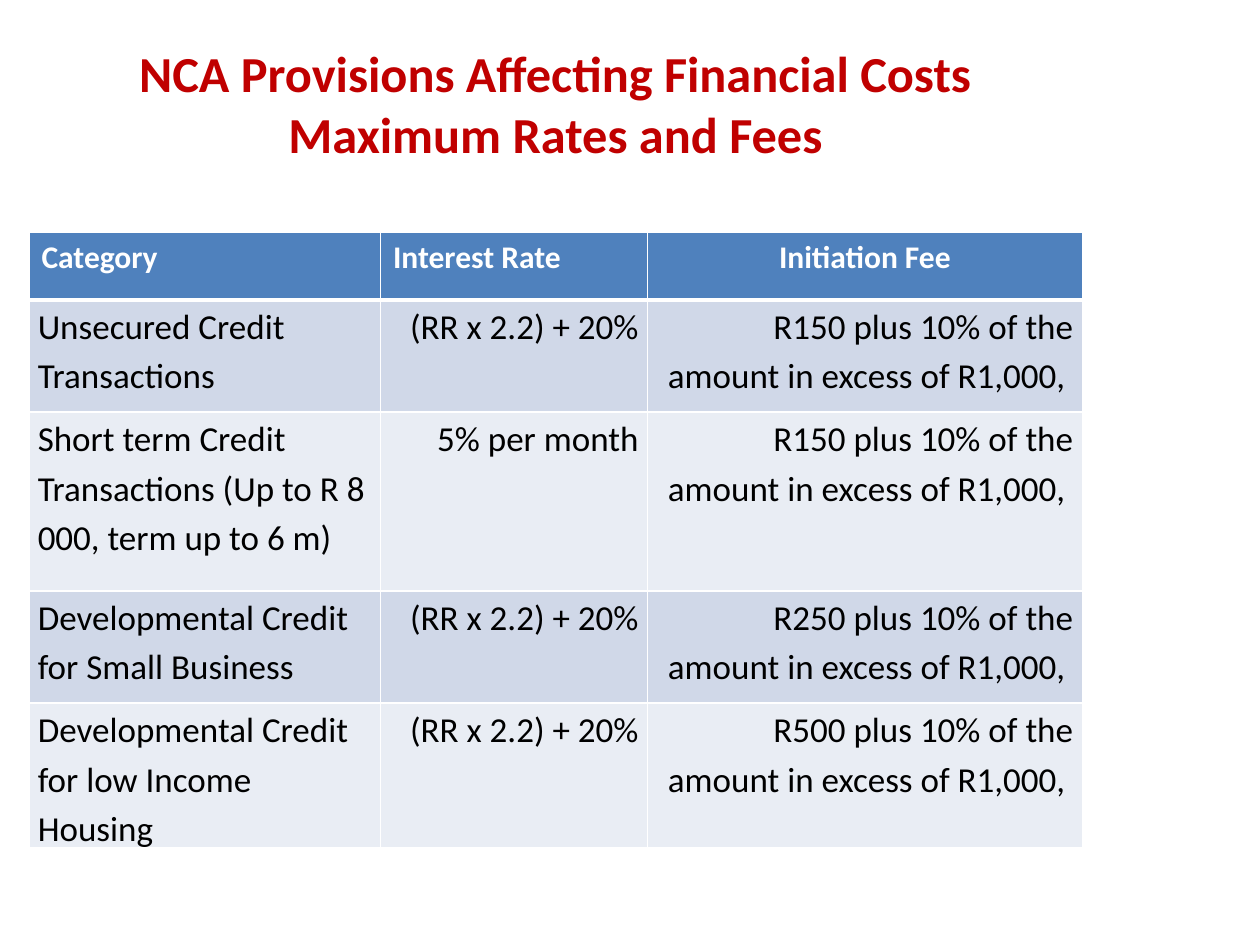
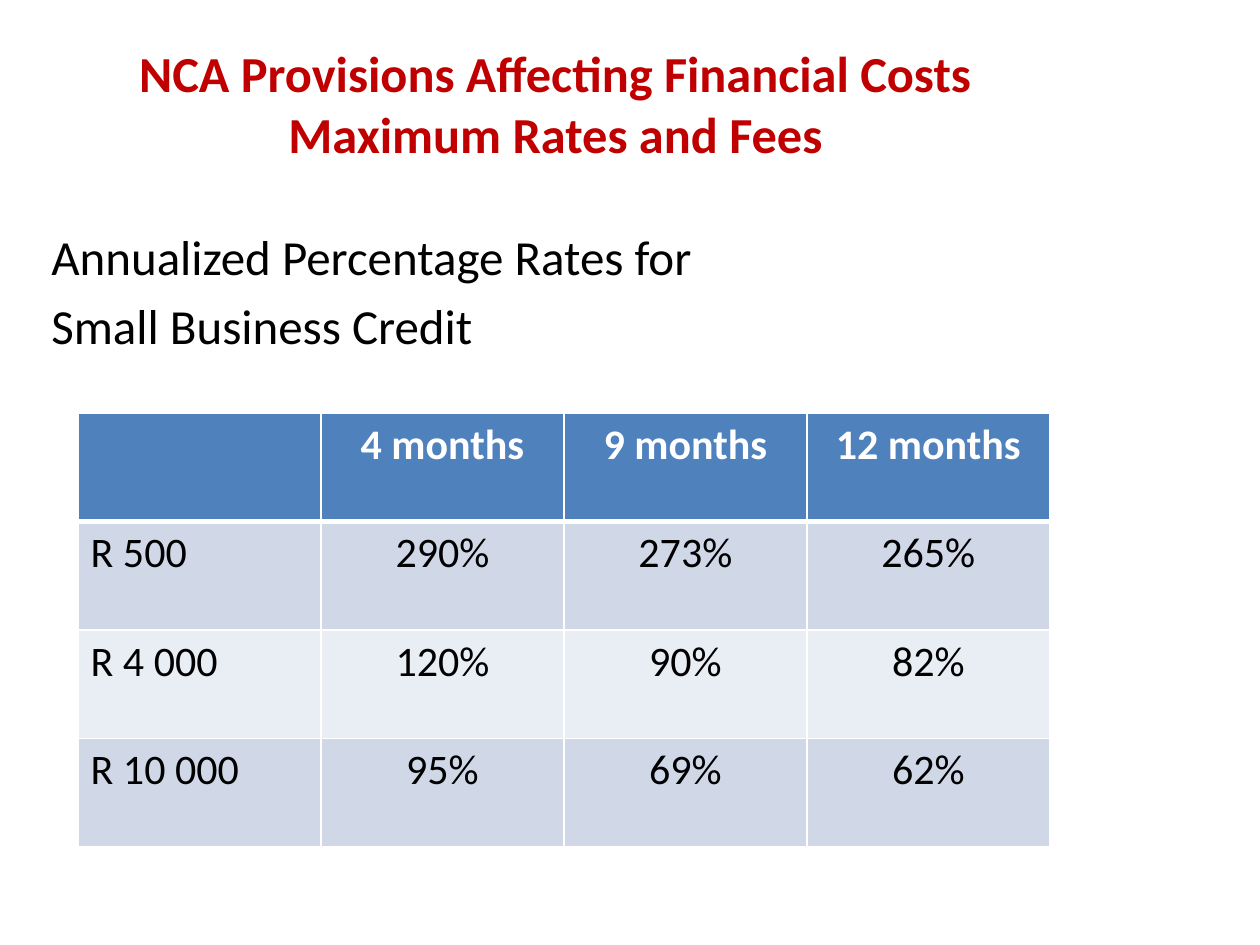
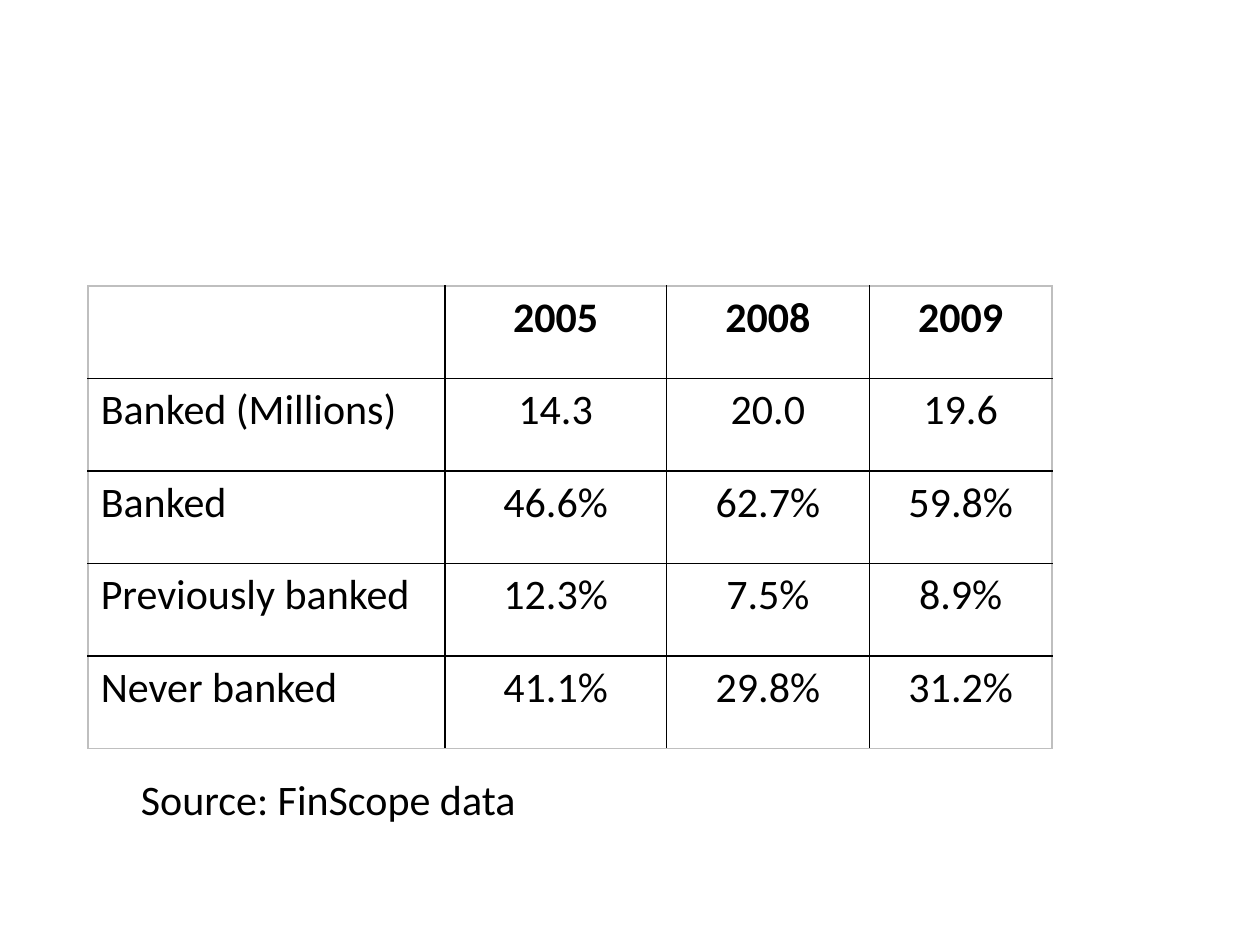
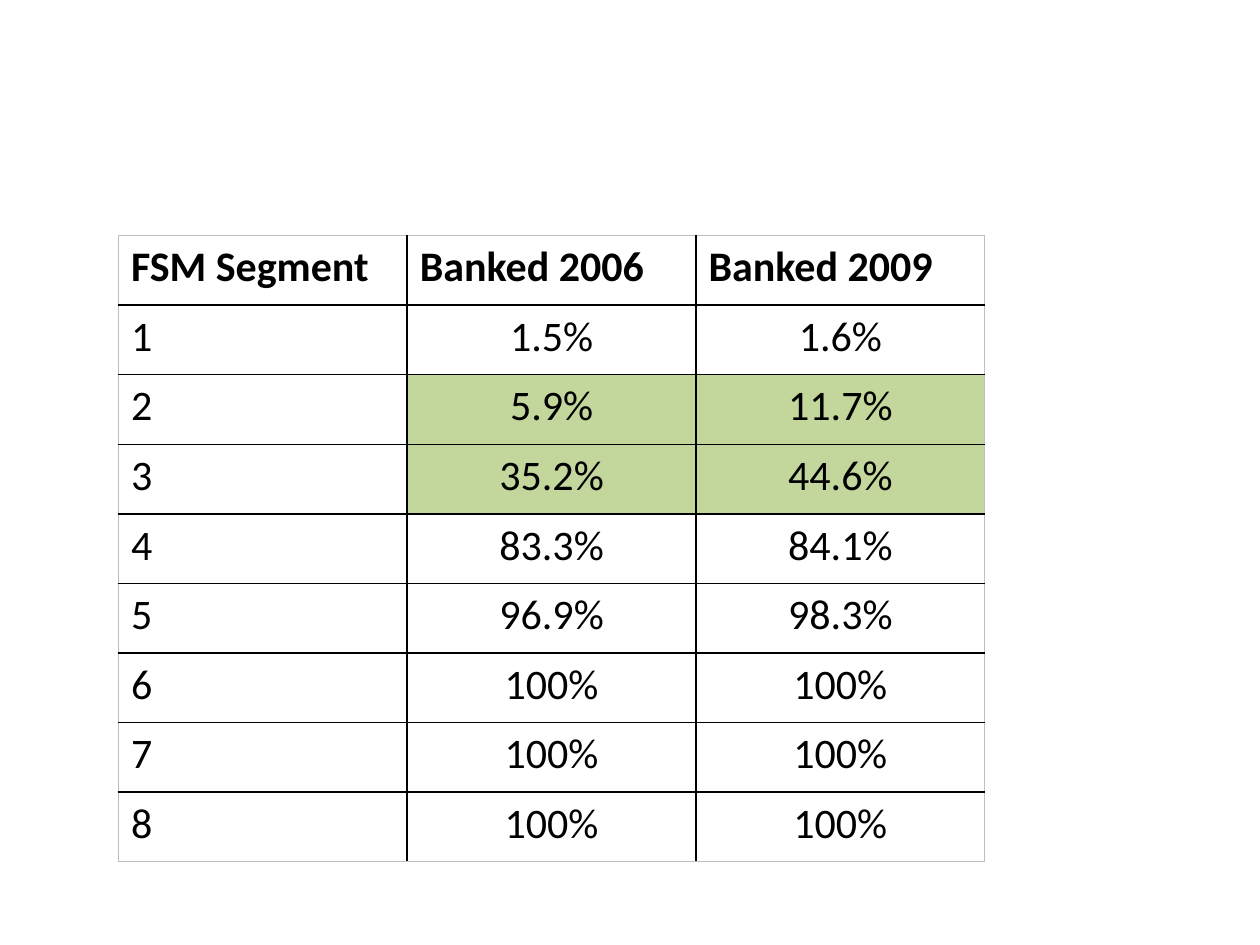
from lxml.etree import SubElement
from pptx import Presentation
from pptx.dml.color import RGBColor
from pptx.enum.text import MSO_ANCHOR, PP_ALIGN
from pptx.oxml.ns import qn
from pptx.util import Inches, Pt

COLS, ROWS = 100, 75
ALIGN = {"l": PP_ALIGN.LEFT, "c": PP_ALIGN.CENTER, "r": PP_ALIGN.RIGHT}
RED, BLACK, WHITE, GREY = "C00000", "000000", "FFFFFF", "BFBFBF"
BLUE, BAND_DARK, BAND_LIGHT, GREEN = "4F81BD", "D0D8E8", "E9EDF4", "C3D69B"
RATES_TITLE = "NCA Provisions Affecting Financial Costs\nMaximum Rates and Fees"


def rgb(value):
    return RGBColor.from_string(value)


def write(p, text, size=24, color=BLACK, bold=False, align="l", before=0,
          spacing=None):
    """Fill a paragraph; a newline becomes a line break."""
    p.alignment = ALIGN[align]
    p.line_spacing = spacing
    if before:
        p.space_before = Pt(before)
    for i, line in enumerate(text.split("\n")):
        if i:
            p.add_line_break()
        r = p.add_run()
        r.text = line
        r.font.name = "Calibri"
        r.font.size = Pt(size)
        r.font.bold = bold
        r.font.color.rgb = rgb(color)


def set_border(cell, side, color, width):
    """Draw one side (L, R, T or B); call before filling the cell."""
    ln = SubElement(cell._tc.get_or_add_tcPr(), qn(f"a:ln{side}"),
                    w=str(Pt(width)))
    SubElement(SubElement(ln, qn("a:solidFill")), qn("a:srgbClr"), val=color)


class Deck:
    def __init__(self):
        self.prs = Presentation()
        self.prs.slide_width, self.prs.slide_height = Inches(10), Inches(7.5)
        self.s = None

    def x(self, cols):
        return round(self.prs.slide_width * cols / COLS)

    def y(self, rows):
        return round(self.prs.slide_height * rows / ROWS)

    def new_slide(self):
        self.s = self.prs.slides.add_slide(self.prs.slide_layouts[6])

    def text(self, left, top, width, height, paragraphs, before=0,
             anchor=MSO_ANCHOR.TOP, **style):
        sp = self.s.shapes.add_textbox(self.x(left), self.y(top),
                                       self.x(width), self.y(height))
        tf = sp.text_frame
        tf.word_wrap = True
        tf.vertical_anchor = anchor
        for i, text in enumerate(paragraphs):
            p = tf.add_paragraph() if i else tf.paragraphs[0]
            write(p, text, before=before if i else 0, **style)

    def title(self, text):
        self.text(3.1, 3, 82, 10.3, [text], size=28.8, color=RED, bold=True,
                  align="c", anchor=MSO_ANCHOR.MIDDLE)

    def table(self, left, top, widths, heights, data, head_align, body_align,
              banded=False, marked=(), head_size=24, body_size=24,
              spacing=None, margins=None):
        """Banded blue table, or a plain ruled one with marked cells."""
        shape = self.s.shapes.add_table(
            len(heights), len(widths), self.x(left), self.y(top),
            self.x(sum(widths)), self.y(sum(heights)))
        table = shape.table
        table.first_row = table.horz_banding = False
        for column, width in zip(table.columns, widths):
            column.width = self.x(width)
        for row, height in zip(table.rows, heights):
            row.height = self.y(height)
        for i, values in enumerate(data):
            for j, value in enumerate(values):
                cell = table.cell(i, j)
                self.borders(cell, i, j, len(heights), len(widths), banded)
                self.fill(cell, i, banded, (i, j) in marked)
                if i and margins:
                    (cell.margin_left, cell.margin_top, cell.margin_right,
                     cell.margin_bottom) = map(Inches, margins)
                p = cell.text_frame.paragraphs[0]
                if value and i == 0:
                    write(p, value, size=head_size, bold=True,
                          color=WHITE if banded else BLACK,
                          align=head_align[j])
                elif value:
                    write(p, value, size=body_size, align=body_align[j],
                          spacing=spacing)

    def borders(self, cell, i, j, rows, cols, banded):
        outer = {"L": j == 0, "R": j == cols - 1,
                 "T": i == 0, "B": i == rows - 1}
        below_head = {"T": i == 1, "B": i == 0}
        for side, is_outer in outer.items():
            if banded:
                width = 3 if below_head.get(side) else 1
                set_border(cell, side, WHITE, width)
            else:
                set_border(cell, side, GREY if is_outer else BLACK, 1)

    def fill(self, cell, i, banded, is_marked):
        if banded:
            color = BLUE if i == 0 else BAND_DARK if i % 2 else BAND_LIGHT
        else:
            color = GREEN if is_marked else None
        if color:
            cell.fill.solid()
            cell.fill.fore_color.rgb = rgb(color)
        else:
            cell.fill.background()


def fee(base):
    return f"{base} plus 10% of the amount in excess of R1,000, "


def main():
    deck = Deck()

    deck.new_slide()
    deck.title(RATES_TITLE)
    rate = "(RR x 2.2) + 20%"
    deck.table(2.3, 18.4, [27.9, 21.2, 34.5], [5.4, 8.9, 14.2, 8.9, 8.9], [
        ["Category", "Interest Rate", "Initiation Fee"],
        ["Unsecured Credit Transactions", rate, fee("R150")],
        ["Short term Credit Transactions (Up to R 8 000, term up to 6 m)",
         "5% per month", fee("R150")],
        ["Developmental Credit for Small Business", rate, fee("R250")],
        ["Developmental Credit for low Income Housing", rate, fee("R500")],
    ], "llc", "lrr", banded=True, head_size=18, body_size=20, spacing=1.15,
        margins=(0.07, 0, 0.07, 0))

    deck.new_slide()
    deck.title(RATES_TITLE)
    deck.text(3.1, 17.5, 82, 49.5, ["Annualized Percentage Rates for",
                                    "Small Business Credit"],
              size=28, before=5.6)
    deck.table(6.2, 32.8, [19.28] * 4, [8.6] * 4, [
        ["", "4 months", "9 months", "12 months"],
        ["R 500", "290%", "273%", "265%"],
        ["R 4 000", "120%", "90%", "82%"],
        ["R 10 000", "95%", "69%", "62%"],
    ], "lccc", "lccc", banded=True)

    deck.new_slide()
    deck.table(7, 22.7, [28.3, 17.6, 16.1, 14.5], [7.34] * 5, [
        ["", "2005", "2008", "2009"],
        ["Banked (Millions)", "14.3", "20.0", "19.6"],
        ["Banked", "46.6%", "62.7%", "59.8%"],
        ["Previously banked", "12.3%", "7.5%", "8.9%"],
        ["Never banked", "41.1%", "29.8%", "31.2%"],
    ], "lccc", "lccc")
    deck.text(10.2, 60.9, 40.6, 5, ["Source: FinScope data"])

    deck.new_slide()
    banked_2006 = ["1.5%", "5.9%", "35.2%", "83.3%", "96.9%"] + ["100%"] * 3
    banked_2009 = ["1.6%", "11.7%", "44.6%", "84.1%", "98.3%"] + ["100%"] * 3
    segments = [[str(n), *pair] for n, pair
                in enumerate(zip(banked_2006, banked_2009), 1)]
    deck.table(9.4, 18.7, [22.92] * 3, [5.52] * 9,
               [["FSM Segment", "Banked 2006", "Banked 2009"], *segments],
               "lll", "lcc", marked={(2, 1), (2, 2), (3, 1), (3, 2)})

    deck.prs.save("out.pptx")


if __name__ == "__main__":
    main()
